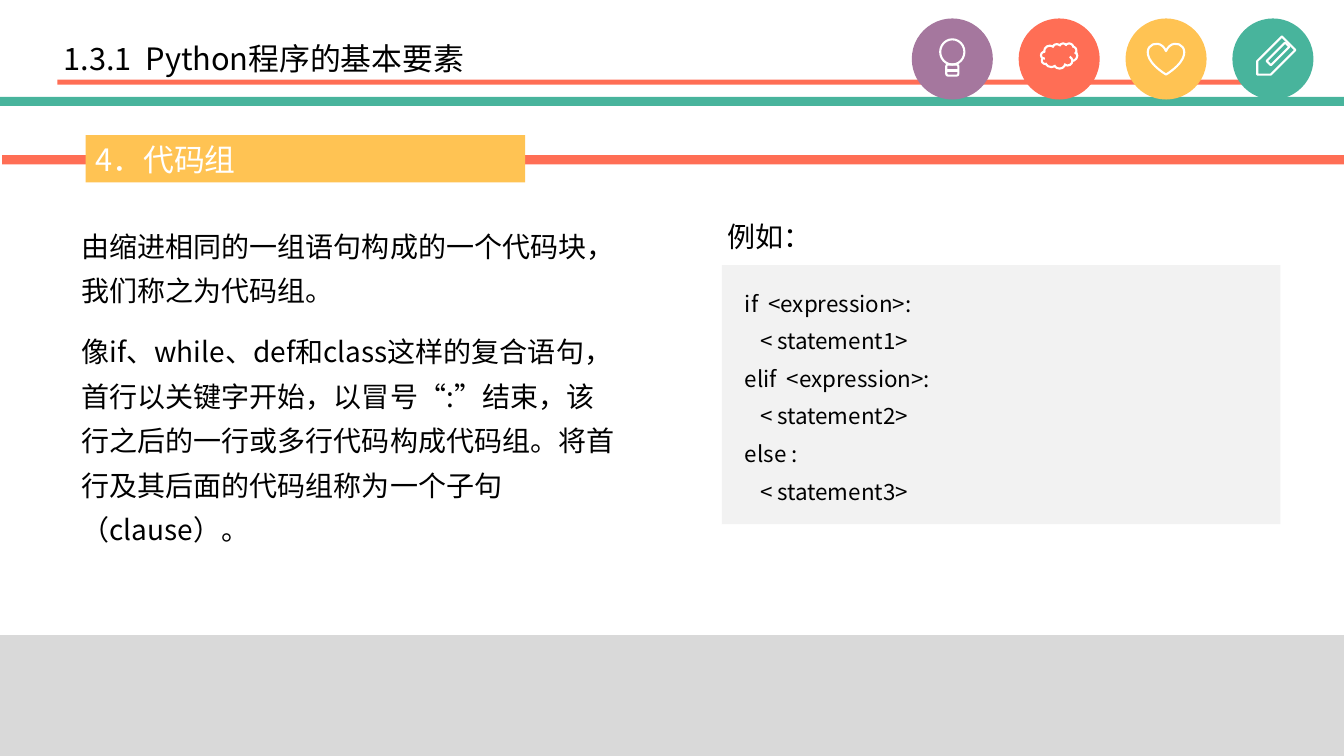
from dataclasses import dataclass, field

from pptx import Presentation
from pptx import util as u
from pptx.dml.color import RGBColor
from pptx.enum import shapes, text
from pptx.oxml.ns import qn

COLS, ROWS = 133.3, 75
CELL = u.Inches(0.1)
FONT = "Noto Sans CJK SC"
CORAL, TEAL, GOLD, PURPLE = "FF6E55", "48B49C", "FFC353", "A5779E"
BLACK, WHITE, PALE, GRAY = "000000", "FFFFFF", "F2F2F2", "D9D9D9"
KIND = shapes.MSO_SHAPE
BADGE_LEFT, BADGE_TOP, BADGE_PITCH, BADGE_SIZE = 90.5, 1.9, 10.6, 7.9


@dataclass
class Box:
    col: float
    row: float
    cols: float
    rows: float

    def emu(self) -> list[int]:
        return [round(n * CELL) for n in (self.col, self.row, self.cols, self.rows)]


@dataclass
class Bar:
    box: Box
    color: str


@dataclass
class Copy:
    lines: list[str]
    size: float
    color: str = BLACK
    fmt: dict = field(default_factory=dict)
    indents: tuple = (0,)


@dataclass
class Stroke:
    kind: KIND
    cols: float
    rows: float
    right: float = 0
    down: float = 0
    rotation: float = 0


@dataclass
class Badge:
    color: str
    strokes: list[Stroke]


HEADER_BARS = [
    Bar(Box(5.7, 7.9, 123.3, 0.5), CORAL),
    Bar(Box(0, 9.6, COLS, 0.9), TEAL),
]
BODY_BARS = [
    Bar(Box(71.6, 26.3, 55.4, 25.7), PALE),
    Bar(Box(0.2, 15.4, COLS - 0.2, 0.9), CORAL),
    Bar(Box(0, 63, COLS, ROWS - 63), GRAY),
]
BADGES = [
    Badge(PURPLE, [
        Stroke(KIND.OVAL, 2.4, 2.5, down=-0.7),
        Stroke(KIND.ROUNDED_RECTANGLE, 1.2, 1.1, down=1.1),
        Stroke(KIND.RECTANGLE, 1.2, 0.1, down=1.1),
    ]),
    Badge(CORAL, [Stroke(KIND.CLOUD, 3.6, 2.5, down=-0.3)]),
    Badge(GOLD, [Stroke(KIND.HEART, 3.6, 3.1)]),
    Badge(TEAL, [
        Stroke(KIND.PENTAGON, 4.4, 1.9, rotation=135),
        Stroke(KIND.RECTANGLE, 2.6, 0.6, 0.5, -0.5, 135),
    ]),
]

LEFT, MIDDLE = text.PP_ALIGN.LEFT, text.MSO_ANCHOR.MIDDLE
TITLE_BOX = Box(5.3, 3.6, 75.6, 4.8)
TITLE = Copy(["1.3.1  Python程序的基本要素"], 22,
             fmt={"line_spacing": 0.9, "alignment": LEFT})
LABEL_BOX = Box(8.5, 13.4, 43.6, 4.7)
LABEL = Copy(["4．代码组"], 22, WHITE, {"alignment": LEFT})
TEXTS = [
    (Box(7.1, 21.2, 55, 33.4), Copy([
        "由缩进相同的一组语句构成的一个代码块，我们称之为代码组。",
        "像if、while、def和class这样的复合语句，首行以关键字开始，以冒号“:”结束，"
        "该行之后的一行或多行代码构成代码组。将首行及其后面的代码组称为一个子句（clause）。",
    ], 20, fmt={"line_spacing": 1.32, "space_before": u.Pt(6), "space_after": u.Pt(6)})),
    (Box(72.9, 27.2, 49.7, 23.2), Copy([
        "if  <expression>:", "< statement1>",
        "elif  <expression>:", "< statement2>",
        "else :", "< statement3>",
    ], 16, fmt={"line_spacing": 1.4, "alignment": text.PP_ALIGN.JUSTIFY}, indents=(0, 1.5))),
    (Box(71.2, 20.3, 28, 5), Copy(["例如："], 20, fmt={"line_spacing": 1.3})),
]


def rgb(color: str) -> RGBColor:
    return RGBColor.from_string(color)


def apply(target, values: dict) -> None:
    for name, value in values.items():
        setattr(target, name, value)


def write(tf, copy: Copy, anchor=text.MSO_ANCHOR.TOP) -> None:
    apply(tf, {"word_wrap": True, "auto_size": text.MSO_AUTO_SIZE.NONE,
               "vertical_anchor": anchor})
    for i, line in enumerate(copy.lines):
        p = tf.add_paragraph() if i else tf.paragraphs[0]
        apply(p, copy.fmt)
        indent = copy.indents[i % len(copy.indents)]
        if indent:
            p._p.get_or_add_pPr().set("marL", str(round(indent * CELL)))
        r = p.add_run()
        r.text = line
        apply(r.font, {"name": FONT, "size": u.Pt(copy.size)})
        r.font.color.rgb = rgb(copy.color)
        rPr = r._r.get_or_add_rPr()
        ea = rPr.makeelement(qn("a:ea"), {"typeface": FONT})
        rPr.find(qn("a:latin")).addnext(ea)


def add_plain(s, kind, box: Box):
    sp = s.shapes.add_shape(kind, *box.emu())
    sp.shadow.inherit = False
    return sp


def add_solid(s, kind, box: Box, color: str):
    sp = add_plain(s, kind, box)
    sp.fill.solid()
    sp.fill.fore_color.rgb = rgb(color)
    sp.line.fill.background()
    return sp


def outline(sp, color: str, width: float) -> None:
    sp.line.color.rgb = rgb(color)
    sp.line.width = u.Pt(width)


def add_badge(s, index: int, badge: Badge) -> None:
    box = Box(BADGE_LEFT + index * BADGE_PITCH, BADGE_TOP, BADGE_SIZE, BADGE_SIZE)
    outline(add_solid(s, KIND.OVAL, box, badge.color), badge.color, 1)
    for stroke in badge.strokes:
        col = box.col + (BADGE_SIZE - stroke.cols) / 2 + stroke.right
        row = box.row + (BADGE_SIZE - stroke.rows) / 2 + stroke.down
        sp = add_plain(s, stroke.kind, Box(col, row, stroke.cols, stroke.rows))
        sp.rotation = stroke.rotation
        sp.fill.background()
        outline(sp, WHITE, 1.5)


def main() -> None:
    prs = Presentation()
    apply(prs, {"slide_width": round(COLS * CELL), "slide_height": ROWS * CELL})
    s = prs.slides.add_slide(prs.slide_layouts[5])
    for bar in HEADER_BARS:
        add_solid(s, KIND.RECTANGLE, bar.box, bar.color)
    for index, badge in enumerate(BADGES):
        add_badge(s, index, badge)
    for bar in BODY_BARS:
        add_solid(s, KIND.RECTANGLE, bar.box, bar.color)
    title = s.shapes.title
    apply(title, dict(zip(("left", "top", "width", "height"), TITLE_BOX.emu())))
    write(title.text_frame, TITLE, MIDDLE)
    label = add_solid(s, KIND.RECTANGLE, LABEL_BOX, GOLD)
    write(label.text_frame, LABEL, MIDDLE)
    for box, copy in TEXTS:
        write(s.shapes.add_textbox(*box.emu()).text_frame, copy)
    prs.save("out.pptx")


if __name__ == "__main__":
    main()
